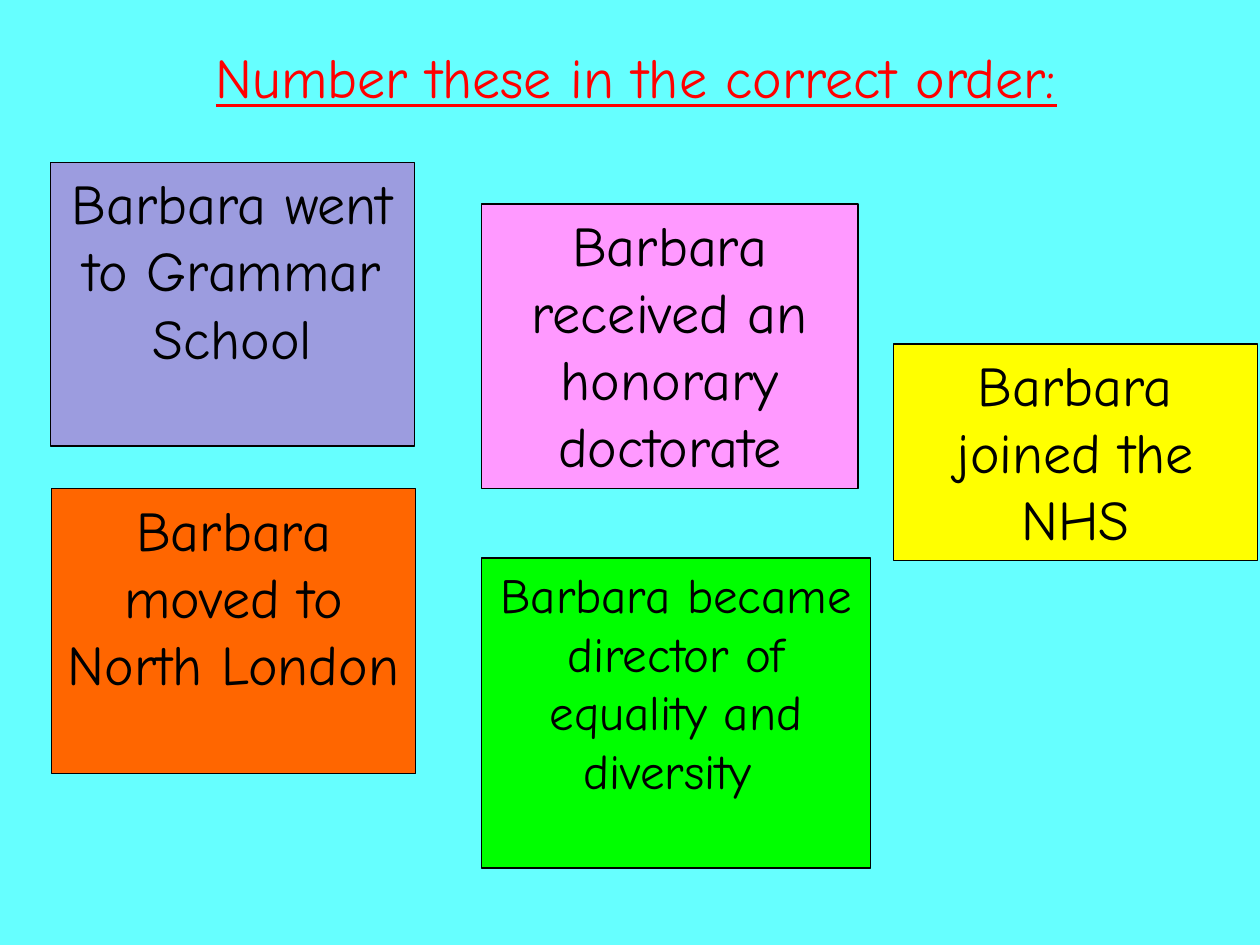
import pptx
import pptx.dml.color
import pptx.enum.shapes
import pptx.enum.text
import pptx.util
from pptx.util import Inches

COLORS = {
    "background": "66FFFF",
    "title": "FF0000",
    "ink": "000000",
    "yellow": "FFFF00",
    "pink": "FF99FF",
    "orange": "FF6600",
    "green": "00FF00",
    "lilac": "9C9CDF",
}
FONT = "Comic Neue"
EVENTS = [
    ("Barbara joined the NHS", "yellow", 32, (7.09, 2.73, 2.89, 1.72)),
    ("Barbara received an honorary doctorate", "pink", 32, (3.82, 1.62, 2.99, 2.26)),
    ("Barbara moved to North London", "orange", 32, (0.41, 3.88, 2.89, 2.26)),
    ("Barbara became director of equality and diversity ", "green", 28, (3.82, 4.43, 3.09, 2.46)),
    ("Barbara went to Grammar School", "lilac", 32, (0.4, 1.29, 2.89, 2.25)),
]


def rgb(name):
    return pptx.dml.color.RGBColor.from_string(COLORS[name])


def write_text(shape, text, size, color, anchor):
    """Put one centred paragraph into a shape."""
    frame = shape.text_frame
    frame.word_wrap = True
    frame.vertical_anchor = anchor
    paragraph = frame.paragraphs[0]
    paragraph.text = text
    paragraph.alignment = pptx.enum.text.PP_ALIGN.CENTER
    paragraph.font.name = FONT
    paragraph.font.size = pptx.util.Pt(size)
    paragraph.font.color.rgb = rgb(color)
    return paragraph


def add_title(slide, text):
    box = slide.shapes.add_textbox(Inches(0.3), Inches(-0.02), Inches(9.5), Inches(1.25))
    paragraph = write_text(box, text, 32, "title", pptx.enum.text.MSO_ANCHOR.MIDDLE)
    paragraph.runs[0].font.underline = True


def add_event(slide, text, fill, size, bounds):
    shape = slide.shapes.add_shape(
        pptx.enum.shapes.MSO_SHAPE.RECTANGLE, *map(Inches, bounds)
    )
    shape.shadow.inherit = False
    shape.fill.solid()
    shape.fill.fore_color.rgb = rgb(fill)
    shape.line.color.rgb = rgb("ink")
    shape.line.width = pptx.util.Pt(0.75)
    write_text(shape, text, size, "ink", pptx.enum.text.MSO_ANCHOR.TOP)


def main():
    presentation = pptx.Presentation()
    presentation.slide_width = Inches(10)
    presentation.slide_height = Inches(7.5)
    slide = presentation.slides.add_slide(presentation.slide_layouts[6])
    slide.background.fill.solid()
    slide.background.fill.fore_color.rgb = rgb("background")
    add_title(slide, "Number these in the correct order:")
    for event in EVENTS:
        add_event(slide, *event)
    presentation.save("out.pptx")


if __name__ == "__main__":
    main()
